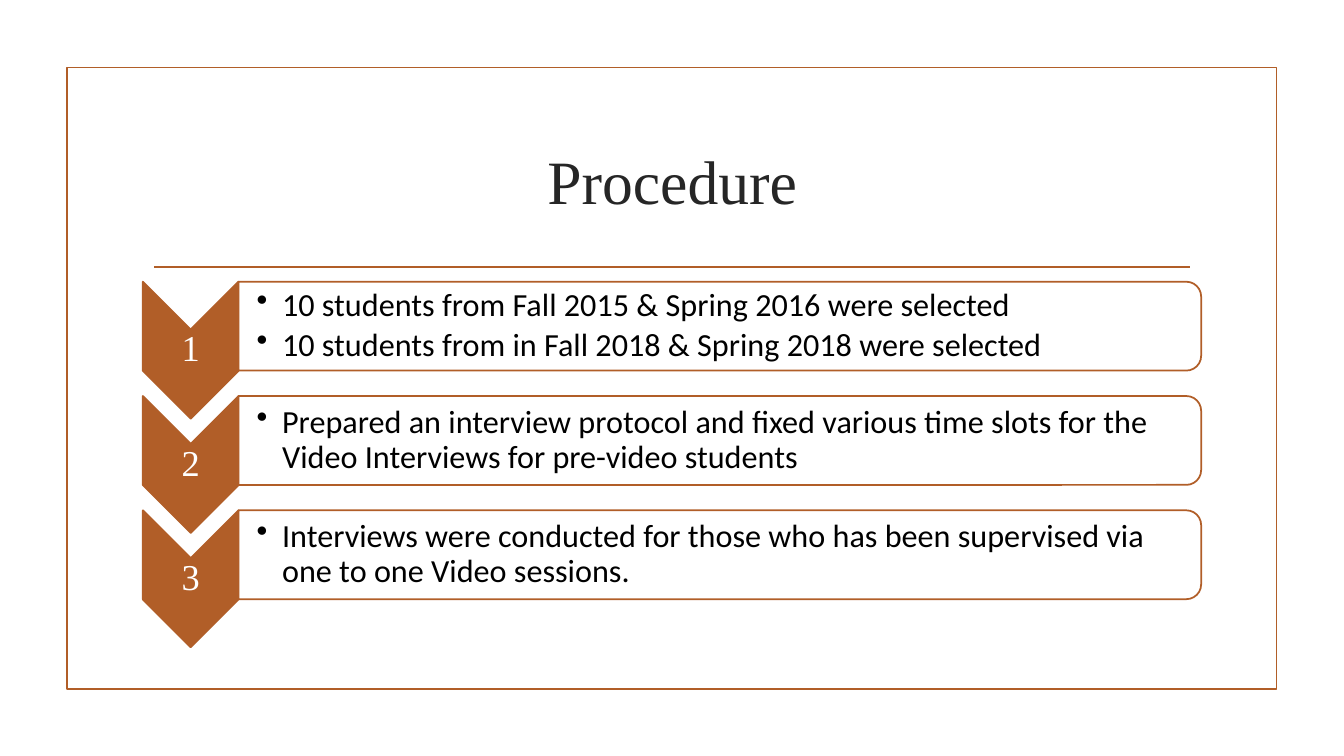
from dataclasses import dataclass

from lxml.etree import SubElement
from pptx import Presentation
from pptx.dml.color import RGBColor
from pptx.enum.shapes import MSO_CONNECTOR, MSO_SHAPE
from pptx.enum.text import MSO_ANCHOR, PP_ALIGN
from pptx.oxml.ns import qn
from pptx.util import Cm, Pt

ACCENT = "B15E28"
WHITE = "FFFFFF"
LINE_WIDTH = Pt(1.25)
SERIF = "Times New Roman"
FIRST_TOP = 7.1
STEP_PITCH = 2.88
CHEVRON_LEFT = 3.6
CHEVRON_WIDTH = 2.41
PANEL_LEFT = CHEVRON_LEFT + CHEVRON_WIDTH


@dataclass
class Box:
    left: float
    top: float
    width: float
    height: float

    def lengths(self) -> tuple:
        return Cm(self.left), Cm(self.top), Cm(self.width), Cm(self.height)

    def before_quarter_turn(self) -> "Box":
        shift = (self.width - self.height) / 2
        return Box(self.left + shift, self.top - shift, self.height, self.width)


@dataclass
class TextStyle:
    font: str
    size: float
    color: str
    centered: bool = True
    bulleted: bool = False
    line_spacing: float = 1.0
    space_after: float = 0
    left_inset: float = 0.05


@dataclass
class Step:
    number: str
    points: list[str]


TITLE_STYLE = TextStyle(SERIF, 44, "262626")
NUMBER_STYLE = TextStyle(SERIF, 26, WHITE, line_spacing=0.9)
POINT_STYLE = TextStyle("Calibri", 23, "000000", centered=False, bulleted=True,
                        line_spacing=0.9, space_after=3.5, left_inset=0.46)

STEPS = [
    Step("1", ["10 students from Fall 2015 & Spring 2016 were selected",
               "10 students from in Fall 2018 & Spring 2018 were selected"]),
    Step("2", ["Prepared an interview protocol and fixed various time slots for the "
               "Video Interviews for pre-video students"]),
    Step("3", ["Interviews were conducted for those who has been supervised via "
               "one to one Video sessions."]),
]


def color(value: str) -> RGBColor:
    return RGBColor.from_string(value)


def add_outlined(slide, kind: MSO_SHAPE, box: Box, fill: str | None = None,
                 opacity: int = 100, rotation: int = 0) -> None:
    placed = box.before_quarter_turn() if rotation == 90 else box
    shape = slide.shapes.add_shape(kind, *placed.lengths())
    shape.shadow.inherit = False
    shape.rotation = rotation
    shape.line.color.rgb = color(ACCENT)
    shape.line.width = LINE_WIDTH
    if fill is None:
        shape.fill.background()
        return
    shape.fill.solid()
    shape.fill.fore_color.rgb = color(fill)
    if opacity < 100:
        fill_color = shape.fill._xPr.find(qn("a:solidFill"))[0]
        SubElement(fill_color, qn("a:alpha")).set("val", str(opacity * 1000))


def add_bullet(paragraph) -> None:
    properties = paragraph._p.get_or_add_pPr()
    properties.set("marL", str(Cm(0.64)))
    properties.set("indent", str(-Cm(0.64)))
    SubElement(properties, qn("a:buChar")).set("char", "•")


def add_text(slide, box: Box, lines: list[str], style: TextStyle) -> None:
    frame = slide.shapes.add_textbox(*box.lengths()).text_frame
    frame.word_wrap = True
    frame.vertical_anchor = MSO_ANCHOR.MIDDLE
    frame.margin_left = Cm(style.left_inset)
    frame.margin_right = frame.margin_top = frame.margin_bottom = Cm(0.05)
    for index, line in enumerate(lines):
        paragraph = frame.add_paragraph() if index else frame.paragraphs[0]
        if style.bulleted:
            add_bullet(paragraph)
        paragraph.alignment = PP_ALIGN.CENTER if style.centered else PP_ALIGN.LEFT
        paragraph.line_spacing = style.line_spacing
        paragraph.space_after = Pt(style.space_after)
        run = paragraph.add_run()
        run.text = line
        run.font.name = style.font
        run.font.size = Pt(style.size)
        run.font.color.rgb = color(style.color)


def add_title_rule(slide) -> None:
    rule = slide.shapes.add_connector(
        MSO_CONNECTOR.STRAIGHT, Cm(3.89), Cm(6.73), Cm(30), Cm(6.73))
    rule.line.color.rgb = color(ACCENT)
    rule.line.width = LINE_WIDTH
    SubElement(rule._element.spPr, qn("a:effectLst"))


def add_step(slide, step: Step, top: float) -> None:
    add_outlined(slide, MSO_SHAPE.CHEVRON, Box(CHEVRON_LEFT, top, CHEVRON_WIDTH, 3.45),
                 fill=ACCENT, rotation=90)
    add_text(slide, Box(CHEVRON_LEFT, top + 1.2, CHEVRON_WIDTH, 1.04),
             [step.number], NUMBER_STYLE)
    add_outlined(slide, MSO_SHAPE.ROUND_2_SAME_RECTANGLE, Box(PANEL_LEFT, top, 24.26, 2.24),
                 fill=WHITE, opacity=90, rotation=90)
    add_text(slide, Box(PANEL_LEFT, top + 0.11, 24.16, 2.01), step.points, POINT_STYLE)


def main() -> None:
    presentation = Presentation()
    presentation.slide_width = Cm(33.87)
    presentation.slide_height = Cm(19.05)
    slide = presentation.slides.add_slide(presentation.slide_layouts[6])
    add_outlined(slide, MSO_SHAPE.RECTANGLE, Box(1.69, 1.7, 30.48, 15.67))
    add_title_rule(slide)
    add_text(slide, Box(3.61, 2.72, 26.67, 3.63), ["Procedure"], TITLE_STYLE)
    for index, step in enumerate(STEPS):
        add_step(slide, step, FIRST_TOP + index * STEP_PITCH)
    presentation.save("out.pptx")


if __name__ == "__main__":
    main()
